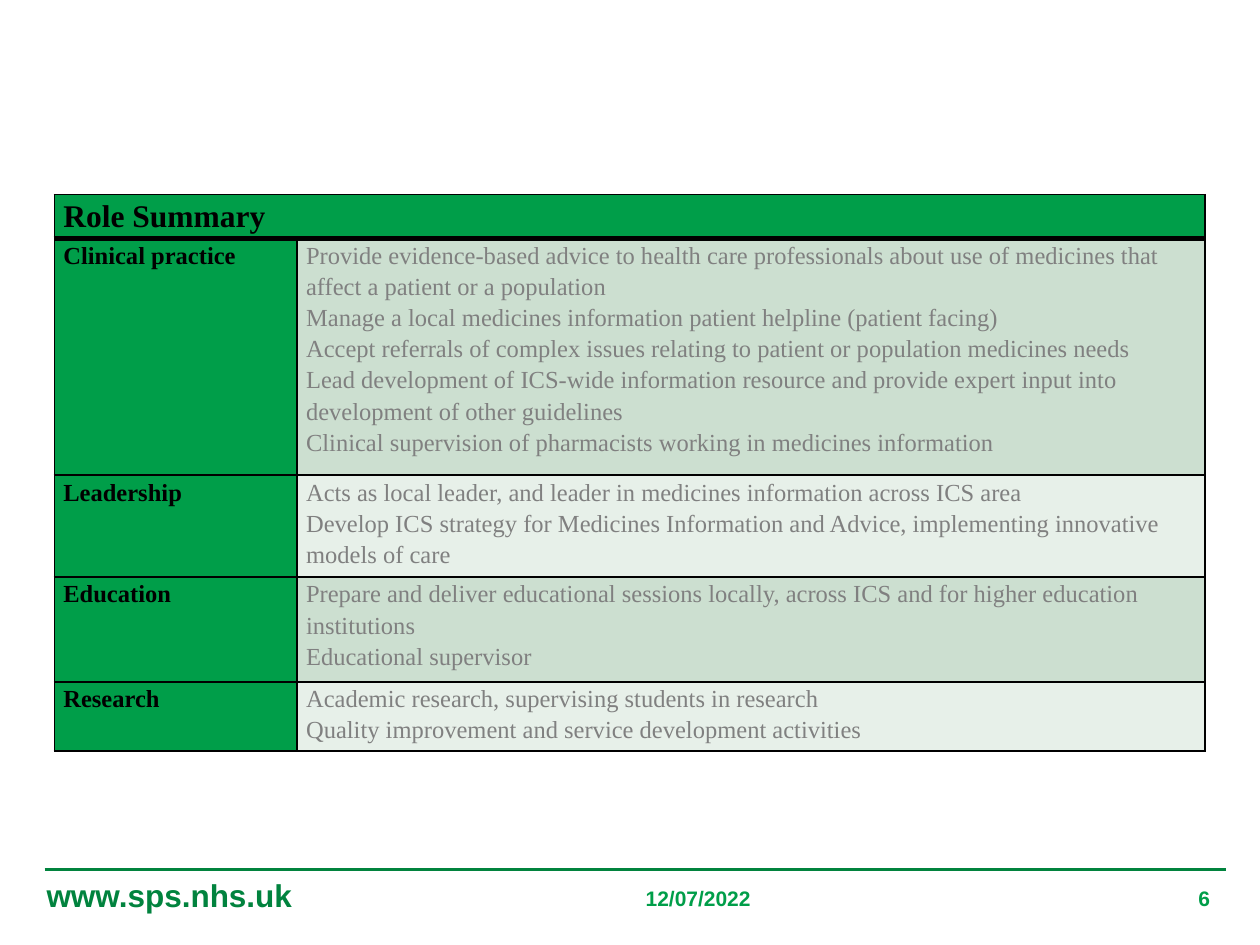
from dataclasses import dataclass

from lxml import etree
from pptx import Presentation
from pptx.dml.color import RGBColor
from pptx.enum.shapes import MSO_CONNECTOR
from pptx.enum.text import PP_ALIGN
from pptx.oxml.ns import qn
from pptx.util import Pt

STRAIGHT = MSO_CONNECTOR.STRAIGHT
LEFT, CENTER, RIGHT = PP_ALIGN.LEFT, PP_ALIGN.CENTER, PP_ALIGN.RIGHT
BLANK_LAYOUT = 6


@dataclass(frozen=True)
class Theme:
    green: str = "009E49"
    dark_green: str = "01833E"
    bands: tuple = ("CCDFD0", "E7F0E9")
    black: str = "000000"
    grey: str = "808080"
    sans: str = "Arial"
    serif: str = "Times New Roman"
    large: int = 18
    body: int = 14
    small: int = 12


THEME = Theme()

HEADING = "Role Summary"
COL_WIDTHS = (138.7, 519)
HEADER_HEIGHT = 25.2
# Role, row height, duties
ROLES = [
    ("Clinical practice", 134.8, [
        "Provide evidence-based advice to health care professionals about use of "
        "medicines that affect a patient or a population",
        "Manage a local medicines information patient helpline (patient facing)",
        "Accept referrals of complex issues relating to patient or population medicines needs",
        "Lead development of ICS-wide information resource and provide expert input into "
        "development of other guidelines",
        "Clinical supervision of pharmacists working in medicines information",
    ]),
    ("Leadership", 58.2, [
        "Acts as local leader, and leader in medicines information across ICS area",
        "Develop ICS strategy for Medicines Information and Advice, implementing innovative "
        "models of care",
    ]),
    ("Education", 60, [
        "Prepare and deliver educational sessions locally, across ICS and for higher "
        "education institutions",
        "Educational supervisor",
    ]),
    ("Research", 39.5, [
        "Academic research, supervising students in research",
        "Quality improvement and service development activities",
    ]),
]


def style_font(p, name, size, color, bold):
    p.font.name = name
    p.font.size = Pt(size)
    p.font.bold = bold
    p.font.color.rgb = RGBColor.from_string(color)


def add_label(s, text, box, size, color, align=LEFT):
    sp = s.shapes.add_textbox(*map(Pt, box))
    tf = sp.text_frame
    tf.word_wrap = True
    p = tf.paragraphs[0]
    p.text = text
    p.alignment = align
    style_font(p, THEME.sans, size, color, True)


def add_rule(s, x1, x2, y):
    line = s.shapes.add_connector(STRAIGHT, Pt(x1), Pt(y), Pt(x2), Pt(y))
    line.line.color.rgb = RGBColor.from_string(THEME.dark_green)
    line.line.width = Pt(1.5)
    etree.SubElement(line._element.spPr, qn("a:effectLst"))


def set_borders(cell, top=1, bottom=1):
    tc_pr = cell._tc.get_or_add_tcPr()
    for side, width in (("L", 1), ("R", 1), ("T", top), ("B", bottom)):
        ln = etree.SubElement(tc_pr, qn(f"a:ln{side}"), w=str(Pt(width)))
        fill = etree.SubElement(ln, qn("a:solidFill"))
        etree.SubElement(fill, qn("a:srgbClr"), val=THEME.black)


def fill_cell(cell, lines, fill, color, bold, size=THEME.body):
    cell.margin_left = cell.margin_right = Pt(5.2)
    cell.margin_top = cell.margin_bottom = 0
    cell.fill.solid()
    cell.fill.fore_color.rgb = RGBColor.from_string(fill)
    tf = cell.text_frame
    tf.text = "\n".join(lines)
    for p in tf.paragraphs:
        p.line_spacing = 1.15
        style_font(p, THEME.serif, size, color, bold)


def add_role_table(s, left, top):
    heights = [HEADER_HEIGHT] + [height for _, height, _ in ROLES]
    frame = s.shapes.add_table(len(heights), len(COL_WIDTHS), Pt(left), Pt(top),
                               Pt(sum(COL_WIDTHS)), Pt(sum(heights)))
    table = frame.table
    table.horz_banding = False
    for col, width in zip(table.columns, COL_WIDTHS):
        col.width = Pt(width)
    for i, (row, height) in enumerate(zip(table.rows, heights)):
        row.height = Pt(height)
        for cell in row.cells:
            set_borders(cell, top=3 if i == 1 else 1, bottom=3 if i == 0 else 1)

    # Heading across both columns
    heading = table.cell(0, 0)
    heading.merge(table.cell(0, 1))
    fill_cell(heading, [HEADING], THEME.green, THEME.black, True, THEME.large)

    # One row for each role
    for i, (role, _, duties) in enumerate(ROLES):
        band = THEME.bands[i % 2]
        fill_cell(table.cell(i + 1, 0), [role], THEME.green, THEME.black, True)
        fill_cell(table.cell(i + 1, 1), duties, band, THEME.grey, False)


def main():
    prs = Presentation()
    prs.slide_width, prs.slide_height = Pt(720), Pt(540)
    s = prs.slides.add_slide(prs.slide_layouts[BLANK_LAYOUT])

    # Footer rule and web address
    add_rule(s, 25.5, 700.5, 497)
    add_label(s, "www.sps.nhs.uk", (19.5, 497, 317.5, 29), THEME.large, THEME.dark_green)

    # Role summary
    add_role_table(s, 31, 111.2)

    # Date and slide number
    add_label(s, "12/07/2022", (309, 502.5, 180, 25), THEME.small, THEME.green, CENTER)
    add_label(s, "6", (513.5, 502.5, 185, 25), THEME.small, THEME.green, RIGHT)

    prs.save("out.pptx")


if __name__ == "__main__":
    main()
